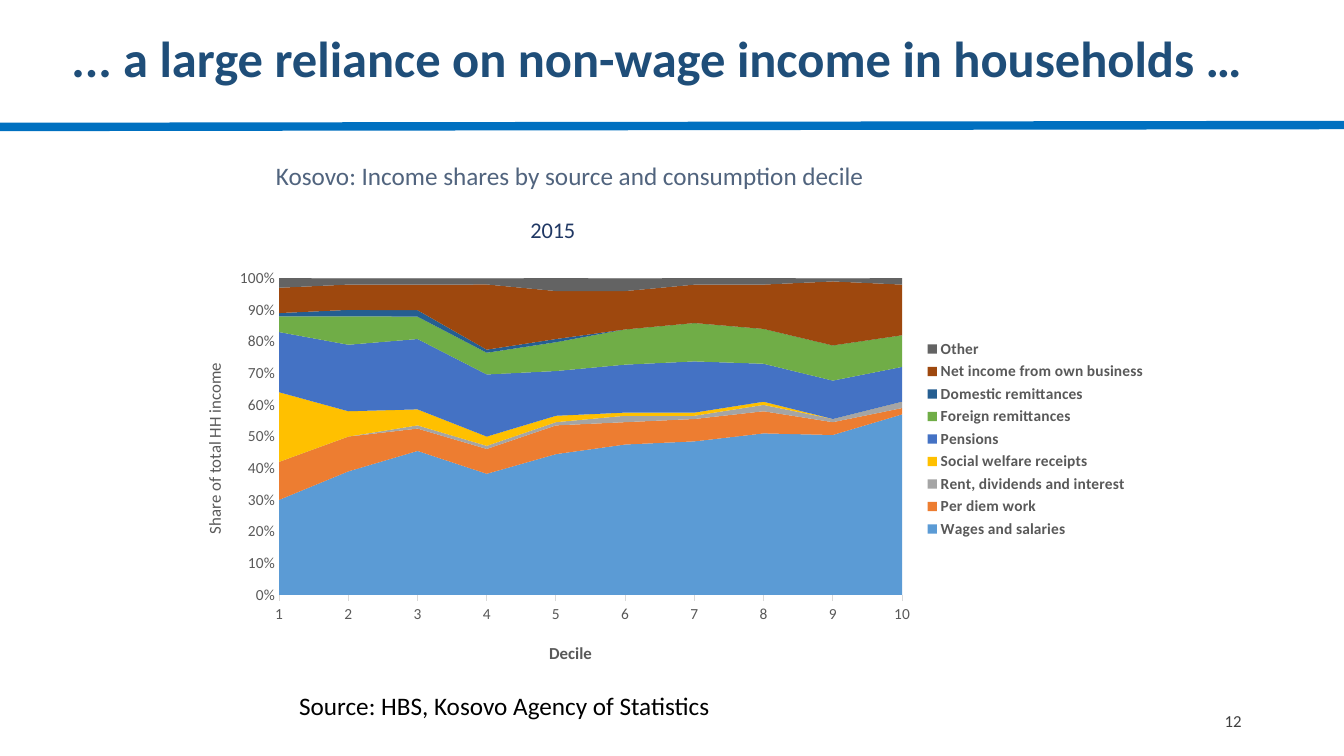
"""Build the slide on income shares by source and consumption decile in Kosovo."""
from lxml import etree
from pptx import Presentation
from pptx.chart.data import CategoryChartData
from pptx.dml.color import RGBColor
from pptx.enum import chart as charts, shapes, text
from pptx.oxml import ns
from pptx.util import Pt

NAVY = RGBColor(0x1F, 0x4E, 0x79)
SLATE = RGBColor(0x51, 0x64, 0x7E)
BLACK = RGBColor(0x00, 0x00, 0x00)
RULE_BLUE = RGBColor(0x00, 0x70, 0xC0)
NUMBER_GRAY = RGBColor(0x40, 0x40, 0x40)
CHART_GRAY = RGBColor(0x59, 0x59, 0x59)
LINE_GRAY = RGBColor(0xD9, 0xD9, 0xD9)
YEAR_BLUE = RGBColor(0x20, 0x38, 0x64)

INCOME_SOURCES = [
    ("Wages and salaries", RGBColor(0x5B, 0x9B, 0xD5), (30, 39, 45, 39, 44, 47, 48, 51, 50, 57)),
    ("Per diem work", RGBColor(0xED, 0x7D, 0x31), (12, 11, 7, 8, 9, 7, 7, 7, 4, 2)),
    ("Rent, dividends and interest", RGBColor(0xA5, 0xA5, 0xA5), (0, 0, 1, 1, 1, 2, 1, 2, 1, 2)),
    ("Social welfare receipts", RGBColor(0xFF, 0xC0, 0x00), (22, 8, 5, 3, 2, 1, 1, 1, 0, 0)),
    ("Pensions", RGBColor(0x44, 0x72, 0xC4), (19, 21, 22, 20, 14, 15, 16, 12, 12, 11)),
    ("Foreign remittances", RGBColor(0x70, 0xAD, 0x47), (5, 9, 7, 7, 9, 11, 12, 11, 11, 10)),
    ("Domestic remittances", RGBColor(0x25, 0x5E, 0x91), (1, 2, 2, 1, 1, 0, 0, 0, 0, 0)),
    ("Net income from own business", RGBColor(0x9E, 0x48, 0x0E), (8, 8, 8, 21, 15, 12, 12, 14, 20, 16)),
    ("Other", RGBColor(0x63, 0x63, 0x63), (3, 2, 2, 2, 4, 4, 2, 2, 1, 2)),
]


def write(frame, words, size, color, bold=False):
    """Fill a text frame with one formatted paragraph and return it."""
    frame.text = words
    para = frame.paragraphs[0]
    font = para.runs[0].font
    font.name, font.size, font.bold = "Calibri", Pt(size), bold
    font.color.rgb = color
    return para


def arrange(element, index, **fractions):
    """Give a chart part a manual layout in fractions of the chart."""
    for old in element.findall(ns.qn("c:layout")):
        element.remove(old)
    layout = etree.Element(ns.qn("c:layout"))
    manual = etree.SubElement(layout, ns.qn("c:manualLayout"))
    settings = {"xMode": "edge", "yMode": "edge", **fractions}
    if element.tag == ns.qn("c:plotArea"):
        settings = {"layoutTarget": "inner", **settings}
    for name, value in settings.items():
        etree.SubElement(manual, ns.qn("c:" + name)).set("val", str(value))
    element.insert(index, layout)


deck = Presentation()
deck.slide_width, deck.slide_height = Pt(960), Pt(540)
page = deck.slides.add_slide(deck.slide_layouts[5])

title = page.shapes.title
title.left, title.top, title.width, title.height = Pt(37.4), Pt(24), Pt(864), Pt(67.7)
title.text_frame.word_wrap = True
title.text_frame.margin_top = 0
title.text_frame.vertical_anchor = text.MSO_ANCHOR.TOP
heading = write(title.text_frame, "... a large reliance on non-wage income in households …", 36.1, NAVY, True)
heading.alignment = text.PP_ALIGN.CENTER
heading.line_spacing = 0.9

for words, left, top, width, size, color, alignment in [
    ("Kosovo: Income shares by source and consumption decile", 190, 111, 463, 18, SLATE, text.PP_ALIGN.LEFT),
    ("Source: HBS, Kosovo Agency of Statistics", 206.6, 489, 381, 18, BLACK, text.PP_ALIGN.LEFT),
    ("12", 678, 500.5, 216, 12, NUMBER_GRAY, text.PP_ALIGN.RIGHT),
]:
    box = page.shapes.add_textbox(Pt(left), Pt(top), Pt(width), Pt(29))
    box.text_frame.word_wrap = True
    box.text_frame.vertical_anchor = text.MSO_ANCHOR.MIDDLE
    write(box.text_frame, words, size, color).alignment = alignment

rule = page.shapes.add_connector(shapes.MSO_CONNECTOR.STRAIGHT, 0, Pt(90.7), Pt(960), Pt(89.3))
rule.line.color.rgb = RULE_BLUE
rule.line.width = Pt(6)
etree.SubElement(rule.element.spPr, ns.qn("a:effectLst"))

data = CategoryChartData(number_format="0")
data.categories = [str(decile) for decile in range(1, 11)]
for name, color, shares in INCOME_SOURCES:
    data.add_series(name, shares)
chart = page.shapes.add_chart(
    charts.XL_CHART_TYPE.AREA_STACKED_100, Pt(121.7), Pt(144), Pt(706.3), Pt(342.7), data
).chart
chart.font.name, chart.font.size = "Calibri", Pt(10)
for series, (name, color, shares) in zip(chart.plots[0].series, INCOME_SOURCES):
    series.format.fill.solid()
    series.format.fill.fore_color.rgb = color
    series.format.line.fill.background()

chart.has_title = True
write(chart.chart_title.text_frame, "2015", 16, YEAR_BLUE)
arrange(chart.chart_title.element, 1, x=0.36, y=0.02)

deciles, income = chart.category_axis, chart.value_axis
for axis, words, bold, left, top in [
    (deciles, "Decile", True, 0.38, 0.91),
    (income, "Share of total HH income", False, 0.03, 0.33),
]:
    axis.tick_labels.font.name = "Calibri"
    axis.tick_labels.font.size = Pt(11)
    axis.tick_labels.font.color.rgb = CHART_GRAY
    axis.minor_tick_mark = charts.XL_TICK_MARK.NONE
    write(axis.axis_title.text_frame, words, 12, CHART_GRAY, bold)
    arrange(axis.axis_title.element, 1, x=left, y=top)

deciles.major_tick_mark = charts.XL_TICK_MARK.OUTSIDE
deciles.has_major_gridlines = False
income.major_tick_mark = charts.XL_TICK_MARK.NONE
income.maximum_scale, income.minimum_scale, income.major_unit = 1, 0, 0.1
income.tick_labels.number_format = "0%"
income.tick_labels.number_format_is_linked = False
income.format.line.fill.background()
for line in (deciles.format.line, income.major_gridlines.format.line):
    line.color.rgb = LINE_GRAY
    line.width = Pt(0.75)

chart.has_legend = True
legend = chart.legend
legend.position = charts.XL_LEGEND_POSITION.RIGHT
legend.include_in_layout = False
legend.font.name, legend.font.size, legend.font.bold = "Calibri", Pt(11), True
legend.font.color.rgb = CHART_GRAY

chart_body = chart.chart_title.element.getparent()
arrange(chart_body.find(ns.qn("c:legend")), 1, x=0.76, y=0.28, w=0.23, h=0.43)
plot_area = chart_body.find(ns.qn("c:plotArea"))
arrange(plot_area, 0, x=0.11, y=0.16, w=0.63, h=0.66)
for crossing in plot_area.iter(ns.qn("c:crossBetween")):
    crossing.set("val", "midCat")

deck.save("out.pptx")
